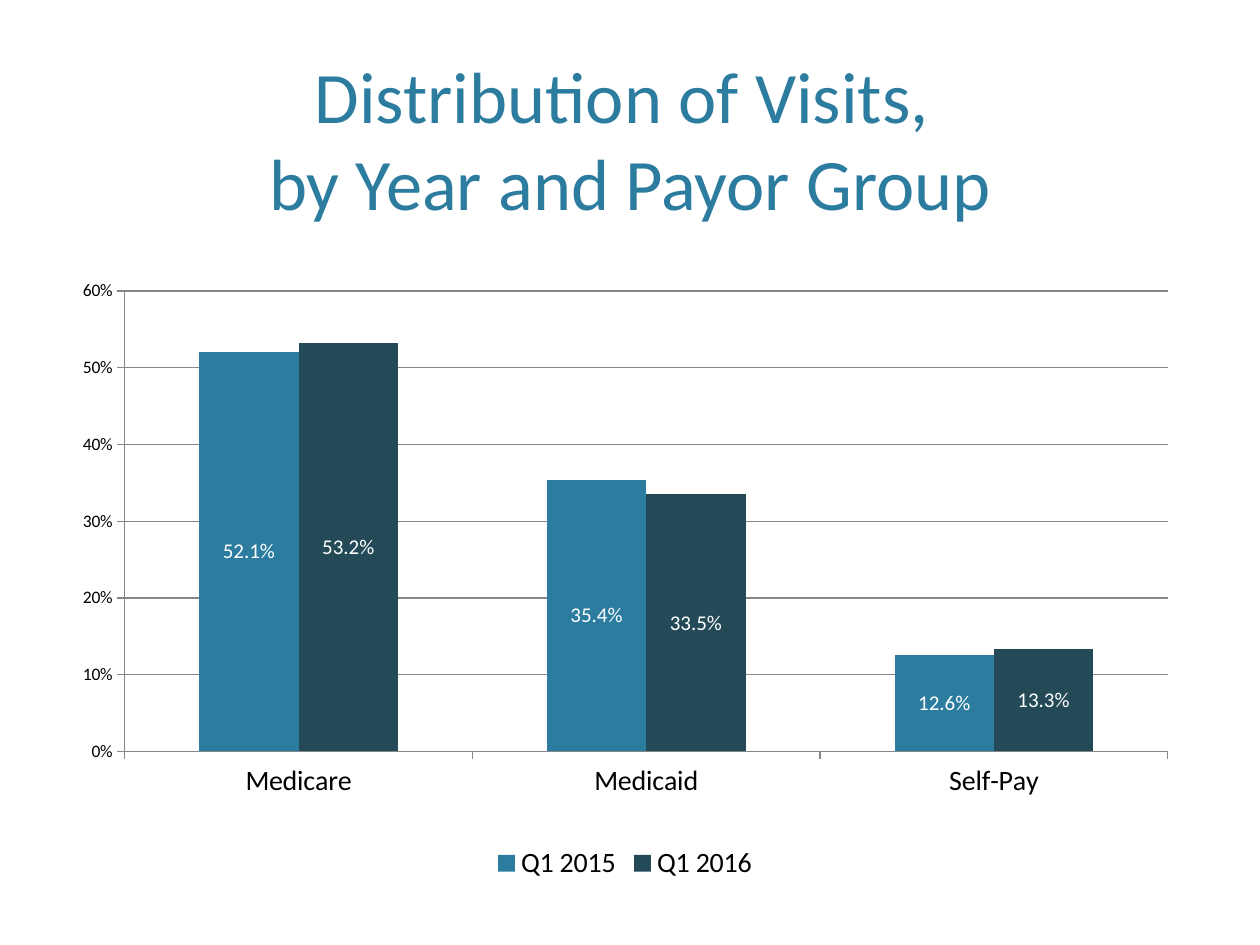
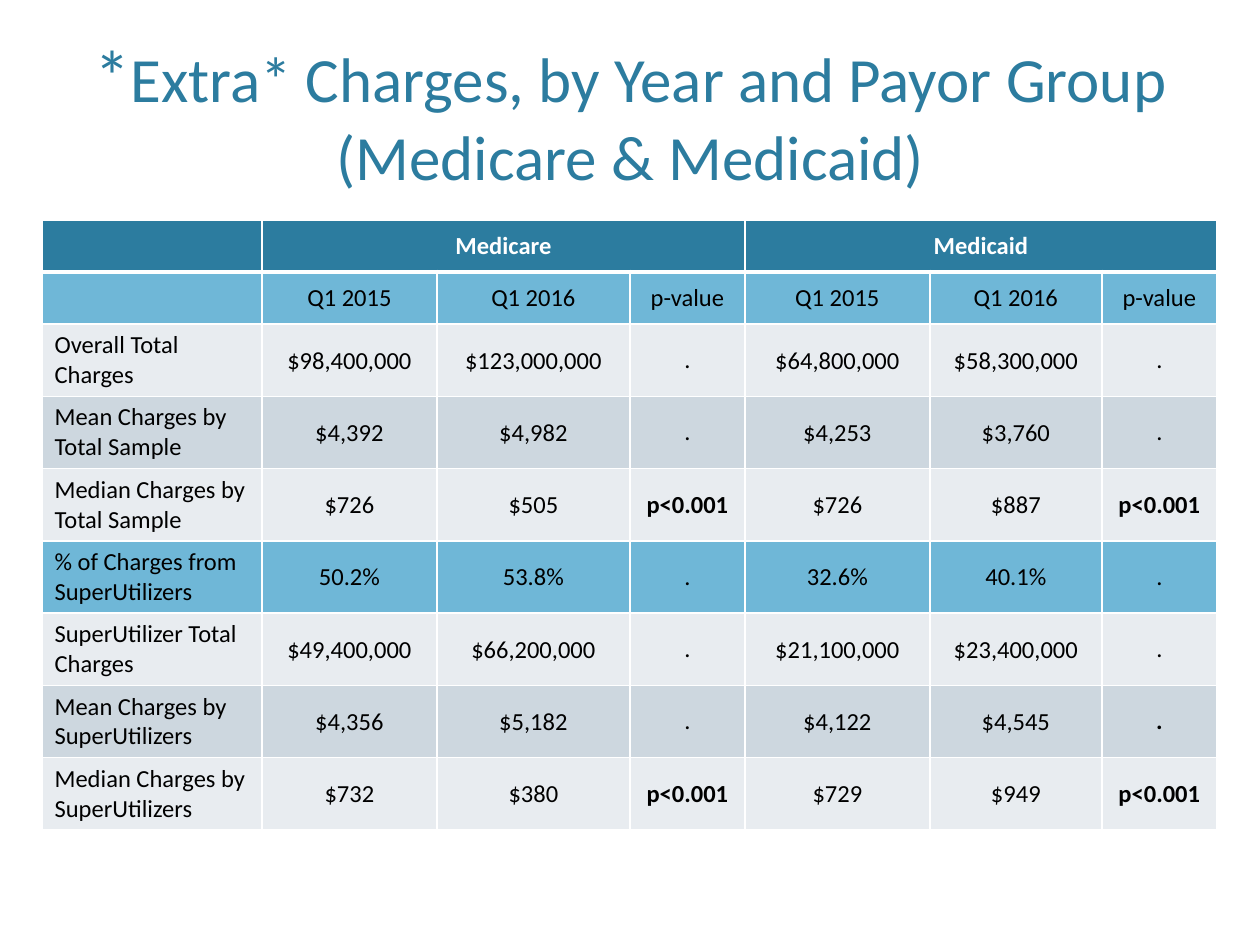
from lxml.etree import SubElement
from pptx import Presentation
from pptx.chart.data import CategoryChartData
from pptx.dml.color import RGBColor
from pptx.enum.chart import XL_CHART_TYPE, XL_LABEL_POSITION, XL_LEGEND_POSITION, XL_TICK_MARK
from pptx.enum.text import MSO_ANCHOR, MSO_AUTO_SIZE, PP_ALIGN
from pptx.oxml import parse_xml
from pptx.oxml.ns import nsdecls, qn
from pptx.util import Pt

EMU_PER_PX = 914400 / 126
FONT = "Calibri"
COLORS = {
    "blue": "2C7C9F",
    "dark": "244A58",
    "sky": "6FB7D7",
    "light": "E8ECF0",
    "mid": "CDD7DF",
    "grid": "868686",
    "white": "FFFFFF",
    "black": "000000",
}
TITLE_SIZE = 41.4

PAYORS = ["Medicare", "Medicaid", "Self-Pay"]
VISIT_SHARES = [
    ("Q1 2015", "blue", [0.521, 0.354, 0.126]),
    ("Q1 2016", "dark", [0.532, 0.335, 0.133]),
]

COLUMN_WIDTHS = [220, 175, 193, 115, 185, 172, 115]
ROW_HEIGHTS = [52] * 2 + [72] * 7
ROW_FILLS = ["blue", "sky", "light", "mid", "light", "sky", "light", "mid", "light"]
CHARGES = [
    ["", "Medicare", "", "", "Medicaid", "", ""],
    [""] + ["Q1 2015", "Q1 2016", "p-value"] * 2,
    ["Overall Total Charges", "$98,400,000", "$123,000,000", ".", "$64,800,000", "$58,300,000", "."],
    ["Mean Charges by Total Sample", "$4,392", "$4,982", ".", "$4,253", "$3,760", "."],
    ["Median Charges by Total Sample", "$726", "$505", "p<0.001", "$726", "$887", "p<0.001"],
    ["% of Charges from SuperUtilizers", "50.2%", "53.8%", ".", "32.6%", "40.1%", "."],
    ["SuperUtilizer Total Charges", "$49,400,000", "$66,200,000", ".", "$21,100,000", "$23,400,000", "."],
    ["Mean Charges by SuperUtilizers", "$4,356", "$5,182", ".", "$4,122", "$4,545", "."],
    ["Median Charges by SuperUtilizers", "$732", "$380", "p<0.001", "$729", "$949", "p<0.001"],
]
PAYOR_COLUMNS = [1, 4]
BOLD_VALUES = {(4, 3), (4, 6), (7, 6), (8, 3), (8, 6)}


def px(length):
    return round(length * EMU_PER_PX)


def color(name):
    return RGBColor.from_string(COLORS[name])


def style_font(font, size, color_name, bold=False):
    font.name = FONT
    font.size = Pt(size)
    font.bold = bold
    font.color.rgb = color(color_name)


def add_title_slide(presentation, box, text, rest="", rest_size=TITLE_SIZE):
    slide = presentation.slides.add_slide(presentation.slide_layouts[5])
    title = slide.shapes.title
    title.left, title.top, title.width, title.height = map(px, box)
    frame = title.text_frame
    frame.word_wrap = True
    frame.auto_size = MSO_AUTO_SIZE.NONE
    frame.vertical_anchor = MSO_ANCHOR.BOTTOM
    paragraph = frame.paragraphs[0]
    paragraph.text = text
    paragraph.alignment = PP_ALIGN.CENTER
    for run in paragraph.runs:
        style_font(run.font, TITLE_SIZE, "blue")
    if rest:
        run = paragraph.add_run()
        run.text = rest
        style_font(run.font, rest_size, "blue")
    return slide


def set_plot_area(chart, left, top, width, height):
    plot_area = chart._chartSpace.chart.plotArea
    for layout in plot_area.findall(qn("c:layout")):
        plot_area.remove(layout)
    layout = parse_xml(f"<c:layout {nsdecls('c')}><c:manualLayout/></c:layout>")
    settings = [
        ("layoutTarget", "inner"), ("xMode", "edge"), ("yMode", "edge"),
        ("x", left), ("y", top), ("w", width), ("h", height),
    ]
    for tag, value in settings:
        SubElement(layout[0], qn(f"c:{tag}")).set("val", str(value))
    plot_area.insert(0, layout)


def style_line(line):
    line.color.rgb = color("grid")
    line.width = Pt(0.75)


def style_axis(axis, size):
    axis.major_tick_mark = XL_TICK_MARK.OUTSIDE
    axis.minor_tick_mark = XL_TICK_MARK.NONE
    style_font(axis.tick_labels.font, size, "black")
    style_line(axis.format.line)


def add_visits_chart(slide, box):
    chart_data = CategoryChartData(number_format="0.0%")
    chart_data.categories = PAYORS
    for name, _, values in VISIT_SHARES:
        chart_data.add_series(name, values)
    chart = slide.shapes.add_chart(XL_CHART_TYPE.COLUMN_CLUSTERED, *map(px, box), chart_data).chart
    chart.has_title = False
    style_font(chart.font, 10, "black")
    set_plot_area(chart, 0.055, 0.031, 0.928, 0.75)

    style_axis(chart.category_axis, 16)
    value_axis = chart.value_axis
    style_axis(value_axis, 10)
    value_axis.minimum_scale, value_axis.maximum_scale, value_axis.major_unit = 0, 0.6, 0.1
    value_axis.tick_labels.number_format = "0%"
    value_axis.tick_labels.number_format_is_linked = False
    value_axis.has_major_gridlines = True
    style_line(value_axis.major_gridlines.format.line)

    chart.has_legend = True
    chart.legend.position = XL_LEGEND_POSITION.BOTTOM
    chart.legend.include_in_layout = False
    style_font(chart.legend.font, 16, "black")

    plot = chart.plots[0]
    plot.gap_width = 150
    plot.overlap = 0
    plot.vary_by_categories = False
    for series, (_, fill_name, _) in zip(plot.series, VISIT_SHARES):
        series.format.fill.solid()
        series.format.fill.fore_color.rgb = color(fill_name)
        labels = series.data_labels
        labels.show_value = True
        labels.position = XL_LABEL_POSITION.CENTER
        labels.number_format = "0.0%"
        labels.number_format_is_linked = False
        style_font(labels.font, 12, "white")


def set_borders(cell, bottom_width):
    properties = cell._tc.get_or_add_tcPr()
    for side, width in [("L", 1), ("R", 1), ("T", 1), ("B", bottom_width)]:
        line = SubElement(properties, qn(f"a:ln{side}"), w=str(Pt(width)))
        fill = SubElement(line, qn("a:solidFill"))
        SubElement(fill, qn("a:srgbClr"), val=COLORS["white"])


def fill_cell(cell, text, row, column):
    is_header = row == 0
    set_borders(cell, 3 if is_header else 1)
    cell.fill.solid()
    cell.fill.fore_color.rgb = color(ROW_FILLS[row])
    cell.vertical_anchor = MSO_ANCHOR.MIDDLE
    if row > 1 and column % 3:
        cell.margin_left = cell.margin_right = cell.margin_top = px(1)
        cell.margin_bottom = 0
    if not text:
        return
    paragraph = cell.text_frame.paragraphs[0]
    paragraph.text = text
    paragraph.alignment = PP_ALIGN.CENTER if column else PP_ALIGN.LEFT
    bold = is_header or (row, column) in BOLD_VALUES
    style_font(paragraph.runs[0].font, 14, "white" if is_header else "black", bold)


def add_charges_table(slide, left, top):
    frame = slide.shapes.add_table(
        len(ROW_HEIGHTS), len(COLUMN_WIDTHS),
        px(left), px(top), px(sum(COLUMN_WIDTHS)), px(sum(ROW_HEIGHTS)),
    )
    table = frame.table
    for column, width in zip(table.columns, COLUMN_WIDTHS):
        column.width = px(width)
    for row, height in zip(table.rows, ROW_HEIGHTS):
        row.height = px(height)
    for row, texts in enumerate(CHARGES):
        for column, text in enumerate(texts):
            fill_cell(table.cell(row, column), text, row, column)
    for column in PAYOR_COLUMNS:
        table.cell(0, column).merge(table.cell(0, column + 2))


def main():
    presentation = Presentation()
    presentation.slide_width = px(1260)
    presentation.slide_height = px(945)

    visits_slide = add_title_slide(
        presentation, (63, 73, 1134, 158), "Distribution of Visits, \vby Year and Payor Group"
    )
    add_visits_chart(visits_slide, (63, 272, 1124, 614))

    charges_slide = add_title_slide(
        presentation, (76, 15, 1109, 184), "*",
        "Extra* Charges, by Year and Payor Group (Medicare & Medicaid)", 36,
    )
    add_charges_table(charges_slide, 42, 220)

    presentation.save("out.pptx")


if __name__ == "__main__":
    main()
